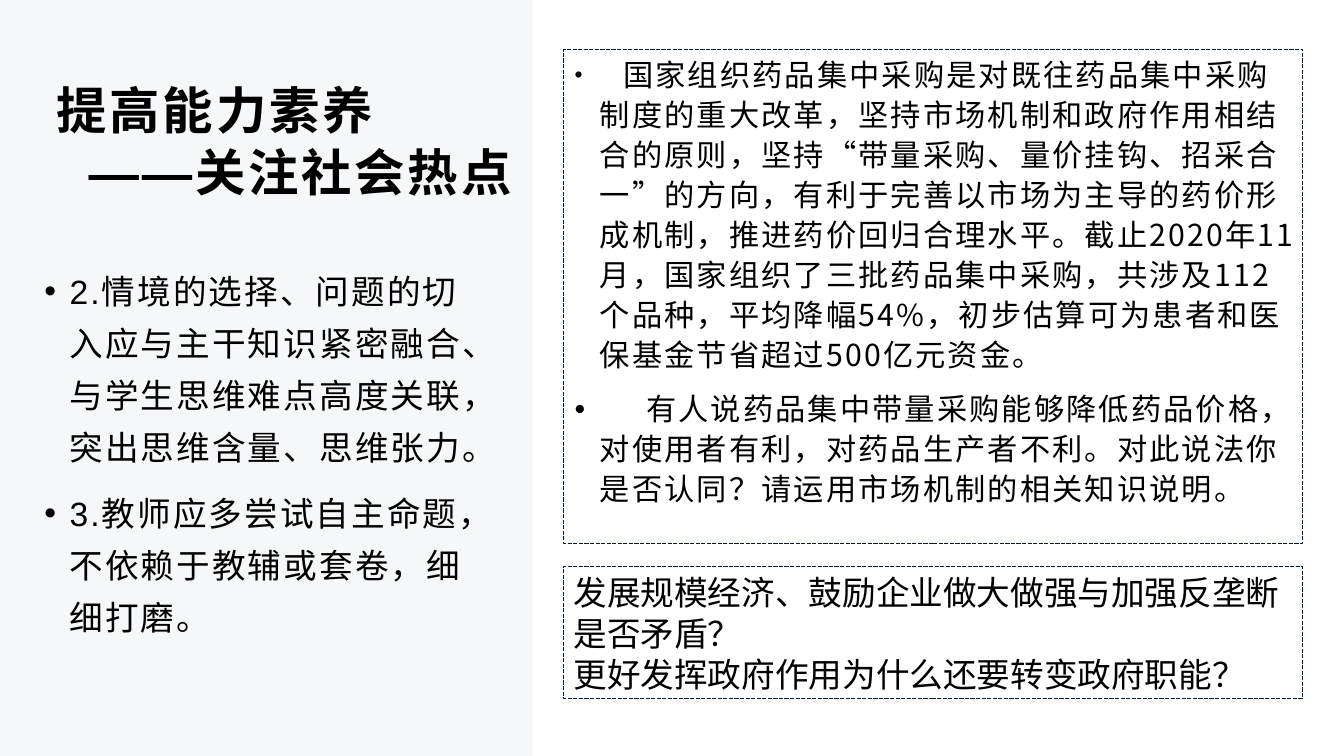
import pptx
import pptx.util
import pptx.dml.color
import pptx.enum.dml
import pptx.enum.shapes
import pptx.enum.text
import pptx.oxml.ns
import lxml.etree

Inches, Pt = pptx.util.Inches, pptx.util.Pt
CJK = "Noto Sans CJK SC"
LATIN = "Arial"


def rgb(code):
    """Turn a hex string into a colour."""
    return pptx.dml.color.RGBColor.from_string(code)


def sub(parent, tag, **attrs):
    """Add a DrawingML child element with attributes."""
    el = lxml.etree.SubElement(parent, pptx.oxml.ns.qn(tag))
    for key, value in attrs.items():
        el.set(key, str(value))
    return el


def add_run(p, text, size=24, font=LATIN, ea=CJK, bold=False, spacing=0, color="000000"):
    """Append formatted text to a paragraph."""
    r = p.add_run()
    r.text = text
    r.font.size, r.font.bold, r.font.name = Pt(size), bold, font
    r.font.color.rgb = rgb(color)
    rpr = r.font._element
    rpr.set("spc", str(round(spacing * 100)))
    sub(rpr, "a:ea", typeface=ea)


def add_paragraph(tf, line, after=0, left=0, bullet=False):
    """Return the next paragraph of a frame with its spacing and indent."""
    p = tf.paragraphs[0] if not tf.paragraphs[0].runs else tf.add_paragraph()
    p.alignment = pptx.enum.text.PP_ALIGN.LEFT
    p.line_spacing, p.space_before, p.space_after = Pt(line), Pt(0), Pt(after)
    ppr = p._p.get_or_add_pPr()
    ppr.set("marL", str(Inches(left)))
    ppr.set("indent", str(Inches(-left if bullet else 0)))
    if bullet:
        sub(ppr, "a:buFont", typeface=LATIN)
        sub(ppr, "a:buChar", char="•")
    return p


def set_frame(tf, anchor, left=0.11, top=0.0, right=0.09, bottom=0.0):
    """Set wrapping, anchor and insets of a text frame."""
    tf.word_wrap = True
    tf.auto_size = pptx.enum.text.MSO_AUTO_SIZE.NONE
    tf.vertical_anchor = anchor
    tf.margin_left, tf.margin_top = Inches(left), Inches(top)
    tf.margin_right, tf.margin_bottom = Inches(right), Inches(bottom)


def add_box(s, x, y, w, h, fill=None, line=None, **insets):
    """Add a rectangle with optional fill and dashed outline."""
    sp = s.shapes.add_shape(pptx.enum.shapes.MSO_SHAPE.RECTANGLE,
                            Inches(x), Inches(y), Inches(w), Inches(h))
    sp.shadow.inherit = False
    if fill:
        sp.fill.solid()
        sp.fill.fore_color.rgb = rgb(fill)
    else:
        sp.fill.background()
    if line:
        sp.line.color.rgb = rgb(line)
        sp.line.width = Pt(1)
        sp.line.dash_style = pptx.enum.dml.MSO_LINE.SQUARE_DOT
    else:
        sp.line.fill.background()
    set_frame(sp.text_frame, pptx.enum.text.MSO_ANCHOR.TOP, **insets)
    return sp


def set_title(s):
    """Place and fill the two-line title."""
    title = s.shapes.title
    title.left, title.top = Inches(0.45), Inches(0.59)
    title.width, title.height = Inches(4.86), Inches(1.59)
    tf = title.text_frame
    set_frame(tf, pptx.enum.text.MSO_ANCHOR.MIDDLE, top=0.04, right=0.08, bottom=0.04)
    style = dict(size=36, bold=True, spacing=2)
    add_run(add_paragraph(tf, 44.3), "提高能力素养", **style)
    p = add_paragraph(tf, 44.3, left=0.32)
    add_run(p, "——", ea=LATIN, **style)
    add_run(p, "关注社会热点", **style)


def main():
    """Build the slide and save it."""
    prs = pptx.Presentation()
    prs.slide_width, prs.slide_height = Inches(13.33), Inches(7.5)
    s = prs.slides.add_slide(prs.slide_layouts[5])
    set_title(s)
    panel = add_box(s, 0, 0, 5.28, 7.5, fill="F5F7F8")
    s.shapes.title.element.addprevious(panel.element)

    advice = add_box(s, 0.33, 2.53, 4.57, 4.03, top=0.04)
    for text in ("2.情境的选择、问题的切入应与主干知识紧密融合、与学生思维难点高度关联，突出思维含量、思维张力。",
                 "3.教师应多尝试自主命题，不依赖于教辅或套卷，细细打磨。"):
        p = add_paragraph(advice.text_frame, 37.2, after=10, left=0.25, bullet=True)
        add_run(p, text, spacing=1.5)

    case = add_box(s, 5.59, 0.49, 7.33, 4.9, line="001847", top=0.03)
    for gap_size, gap_spacing, font, text in (
            (16.2, 0.5, CJK,
             "国家组织药品集中采购是对既往药品集中采购制度的重大改革，坚持市场机制和政府作用相结合的原则，"
             "坚持“带量采购、量价挂钩、招采合一”的方向，有利于完善以市场为主导的药价形成机制，"
             "推进药价回归合理水平。截止2020年11月，国家组织了三批药品集中采购，共涉及112个品种，"
             "平均降幅54%，初步估算可为患者和医保基金节省超过500亿元资金。"),
            (21.6, 11.5, LATIN,
             "有人说药品集中带量采购能够降低药品价格，对使用者有利，对药品生产者不利。"
             "对此说法你是否认同？请运用市场机制的相关知识说明。")):
        p = add_paragraph(case.text_frame, 28.6, after=10, left=0.25, bullet=True)
        add_run(p, "　", size=gap_size, font=font, spacing=gap_spacing)
        add_run(p, text, size=21.6, font=font, spacing=1.5)

    questions = add_box(s, 5.59, 5.62, 7.33, 1.31, line="001847",
                        left=0.1, top=0.05, right=0.1, bottom=0.05)
    for text in ("发展规模经济、鼓励企业做大做强与加强反垄断是否矛盾？",
                 "更好发挥政府作用为什么还要转变政府职能？"):
        add_run(add_paragraph(questions.text_frame, 29.3), text, font=CJK)

    prs.save("out.pptx")


if __name__ == "__main__":
    main()
